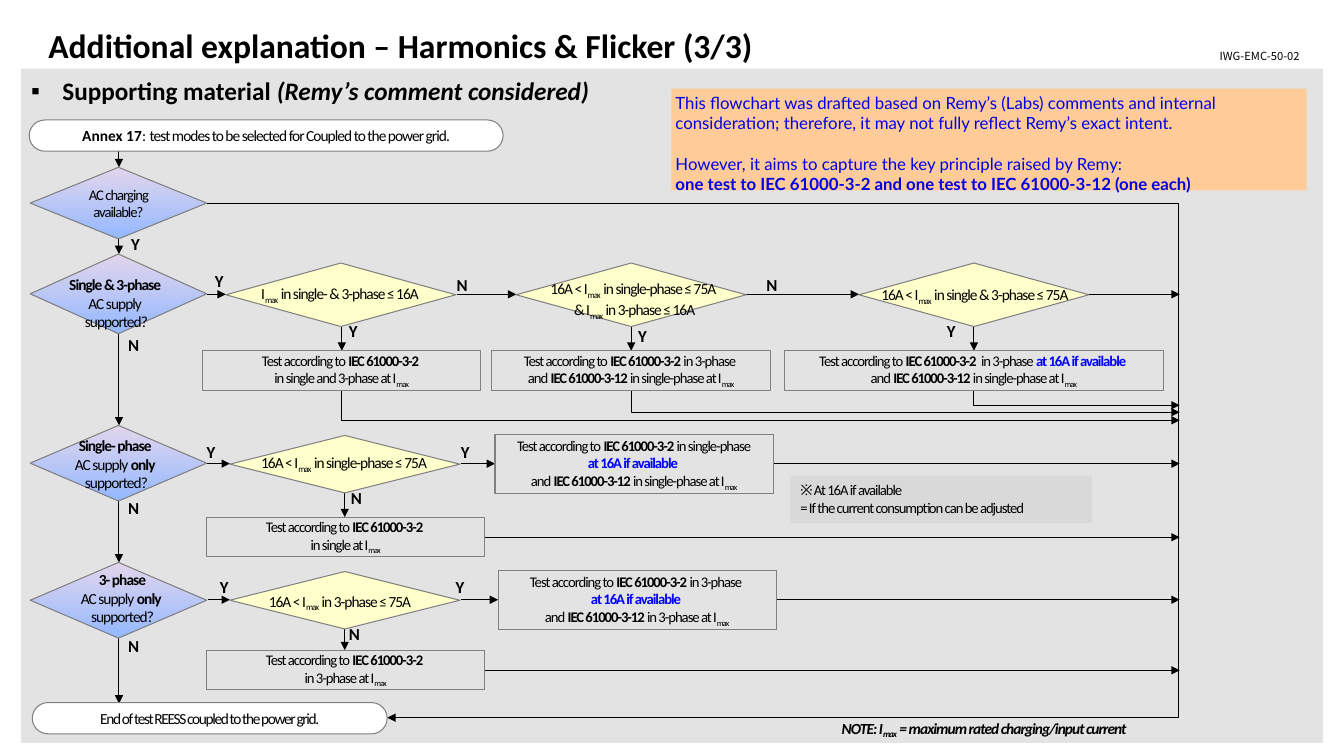
from dataclasses import dataclass

from lxml.etree import SubElement
from pptx import Presentation
from pptx.dml.color import RGBColor
from pptx.enum.shapes import MSO_CONNECTOR, MSO_SHAPE
from pptx.enum.text import MSO_ANCHOR, MSO_AUTO_SIZE, PP_ALIGN
from pptx.oxml.ns import qn
from pptx.util import Inches, Pt

COLORS = {
    "black": "000000", "blue": "0000FF", "note blue": "0000E6", "white": "FFFFFF",
    "panel": "E3E3E3", "remark": "D9D9D9", "comment": "FFCC99", "outline": "808080",
    "check": "FFFFCC", "supply top": "E2D6EC", "supply bottom": "94B8FF",
}
EXIT_X = 11.7
MAIN_X = 1.18


@dataclass(frozen=True)
class Run:
    text: str
    bold: bool = False
    italic: bool = False
    sub: bool = False
    color: str | None = None
    spacing: float | None = None


@dataclass(frozen=True)
class Style:
    size: float = 11
    spacing: float = -0.7
    font: str = "Calibri"
    color: str = "black"
    align: PP_ALIGN = PP_ALIGN.CENTER
    anchor: MSO_ANCHOR = MSO_ANCHOR.MIDDLE
    inset: tuple[float, float] = (0, 0)
    wrap: bool = True


@dataclass(frozen=True)
class Box:
    left: float
    top: float
    width: float
    height: float


@dataclass(frozen=True)
class Check:
    diamond: Box
    text: Box
    paragraphs: list


PADDED = (0.1, 0.05)
SMALL = Style(size=10.5)
CHECK = Style(anchor=MSO_ANCHOR.TOP)
BRANCH = Style(size=12, spacing=0, align=PP_ALIGN.LEFT, anchor=MSO_ANCHOR.TOP, wrap=False)
LEFT_TOP = {"align": PP_ALIGN.LEFT, "anchor": MSO_ANCHOR.TOP}


def rgb(name: str) -> RGBColor:
    return RGBColor.from_string(COLORS[name])


def imax(before: str, after: str = "") -> list[Run]:
    """Runs of a phrase around I with the subscript max."""
    return [Run(before + "I"), Run("max", sub=True)] + ([Run(after)] if after else [])


def low_current(after: str = "") -> list[Run]:
    return [Run("Test according to "), Run("IEC 61000-3-2 ", bold=True)] + (
        [Run(after)] if after else [])


def high_current(phase: str) -> list[Run]:
    return [Run("and "), Run("IEC 61000-3-12 ", bold=True), *imax(f"in {phase} at ")]


def write(frame, paragraphs: list[list[Run]], style: Style) -> None:
    frame.auto_size = MSO_AUTO_SIZE.NONE
    frame.word_wrap = style.wrap
    frame.vertical_anchor = style.anchor
    frame.margin_left = frame.margin_right = Inches(style.inset[0])
    frame.margin_top = frame.margin_bottom = Inches(style.inset[1])
    for index, runs in enumerate(paragraphs):
        paragraph = frame.add_paragraph() if index else frame.paragraphs[0]
        paragraph.alignment = style.align
        paragraph.space_before = Pt(0)
        for part in runs:
            run = paragraph.add_run()
            run.text = part.text
            font = run.font
            font.name, font.size = style.font, Pt(style.size)
            font.bold, font.italic = part.bold, part.italic
            font.color.rgb = rgb(part.color or style.color)
            spacing = style.spacing if part.spacing is None else part.spacing
            properties = font._element
            if spacing:
                properties.set("spc", str(round(spacing * 100)))
            if part.sub:
                properties.set("baseline", "-25000")


def place(shape, box: Box) -> None:
    shape.left, shape.top = Inches(box.left), Inches(box.top)
    shape.width, shape.height = Inches(box.width), Inches(box.height)


def add_block(shapes, kind: MSO_SHAPE, box: Box, fill: str | None, outlined: bool = True):
    """Draw a preset shape; the fill "supply" is the lilac to blue gradient."""
    shape = shapes.add_shape(kind, *map(Inches, (box.left, box.top, box.width, box.height)))
    shape.shadow.inherit = False
    if fill == "supply":
        shape.fill.gradient()
        shape.fill.gradient_angle = 270
        for position, stop in enumerate(shape.fill.gradient_stops):
            stop.position = position
            stop.color.rgb = rgb(("supply top", "supply bottom")[position])
    elif fill:
        shape.fill.solid()
        shape.fill.fore_color.rgb = rgb(fill)
    else:
        shape.fill.background()
    if outlined:
        shape.line.color.rgb = rgb("outline")
        shape.line.width = Pt(0.75)
    else:
        shape.line.fill.background()
    if kind == MSO_SHAPE.ROUNDED_RECTANGLE:
        shape.adjustments[0] = 0.5
    return shape


def add_text(shapes, box: Box, paragraphs: list[list[Run]], style: Style) -> None:
    text = shapes.add_textbox(*map(Inches, (box.left, box.top, box.width, box.height)))
    write(text.text_frame, paragraphs, style)


def add_arrow(shapes, x1: float, y1: float, x2: float, y2: float,
              kind: MSO_CONNECTOR = MSO_CONNECTOR.STRAIGHT):
    arrow = shapes.add_connector(kind, *map(Inches, (x1, y1, x2, y2)))
    arrow.line.color.rgb = rgb("black")
    arrow.line.width = Pt(0.75)
    SubElement(arrow.line._get_or_add_ln(), qn("a:tailEnd"), type="triangle")
    SubElement(arrow._element.spPr, qn("a:effectLst"))
    return arrow


def add_down_then_right(shapes, x1: float, y1: float, x2: float, y2: float) -> None:
    """A one-bend connector is a mirrored elbow turned by 270 degrees about its centre."""
    mid_x, mid_y, half_run, half_drop = (x1 + x2) / 2, (y1 + y2) / 2, (x2 - x1) / 2, (y2 - y1) / 2
    elbow = add_arrow(shapes, mid_x + half_drop, mid_y - half_run,
                      mid_x - half_drop, mid_y + half_run, MSO_CONNECTOR.ELBOW)
    properties = elbow._element.spPr
    properties.find(qn("a:xfrm")).set("rot", "16200000")
    properties.find(qn("a:prstGeom")).set("prst", "bentConnector2")


AT_16A = Run("at 16A if available ", bold=True, color="blue")
ONLY = [Run("AC supply "), Run("only ", bold=True)]

SUPPLY_CHECKS = [
    Check(Box(0.3, 2.52, 1.75, 0.79), Box(0.21, 2.73, 1.89, 0.56),
          [[Run("Single & 3-phase ", bold=True)], [Run("AC supply ")], [Run("supported?")]]),
    Check(Box(0.3, 4.22, 1.75, 0.75), Box(0.21, 4.33, 1.89, 0.56),
          [[Run("Single- phase ", bold=True)], ONLY, [Run("supported?")]]),
    Check(Box(0.3, 5.58, 1.75, 0.75), Box(0.27, 5.66, 1.89, 0.56),
          [[Run("3- phase", bold=True)], ONLY, [Run("supported?")]]),
]
CURRENT_CHECKS = [
    Check(Box(2.24, 2.61, 2.28, 0.63), Box(2.44, 2.82, 1.89, 0.19),
          [imax("", " in single- & 3-phase ≤ 16A ")]),
    Check(Box(5.12, 2.61, 2.28, 0.63), Box(5.31, 2.77, 1.97, 0.37),
          [imax("16A < ", " in single-phase ≤ 75A "), imax("& ", " in 3-phase ≤ 16A")]),
    Check(Box(8.52, 2.61, 2.28, 0.63), Box(8.55, 2.83, 2.24, 0.19),
          [imax("16A < ", " in single & 3-phase ≤ 75A")]),
    Check(Box(2.28, 4.32, 2.28, 0.57), Box(2.44, 4.5, 1.97, 0.19),
          [imax("16A < ", " in single-phase ≤ 75A ")]),
    Check(Box(2.28, 5.67, 2.28, 0.57), Box(2.52, 5.87, 1.73, 0.19),
          [imax("16A < ", " in 3-phase ≤ 75A ")]),
]
TESTS = [
    (Box(2.01, 3.48, 2.76, 0.39), [low_current(), imax("in single and 3-phase at ")]),
    (Box(4.88, 3.48, 2.76, 0.39), [low_current("in 3-phase "), high_current("single-phase")]),
    (Box(7.78, 3.48, 3.76, 0.39),
     [low_current(" in 3-phase ") + [AT_16A], high_current("single-phase")]),
    (Box(4.91, 4.31, 2.76, 0.59),
     [low_current("in single-phase"), [AT_16A], high_current("single-phase")]),
    (Box(2.05, 5.13, 2.76, 0.39), [low_current(), imax("in single at ")]),
    (Box(4.94, 5.66, 2.76, 0.59),
     [low_current("in 3-phase "), [AT_16A], high_current("3-phase")]),
    (Box(2.05, 6.45, 2.76, 0.39), [low_current(), imax("in 3-phase at ")]),
]
DOWN = [(MAIN_X, 1.42, 1.66), (MAIN_X, 2.37, 2.52), (MAIN_X, 3.31, 4.22), (MAIN_X, 4.96, 5.58),
        (MAIN_X, 6.33, 6.98), (3.39, 3.23, 3.48), (6.26, 3.23, 3.48), (9.66, 3.23, 3.48),
        (3.42, 4.89, 5.13), (3.42, 6.24, 6.45)]
RIGHT = [(2.92, 2.05, 2.24), (2.92, 4.53, 5.12), (2.92, 7.4, 8.52), (2.92, 10.8, EXIT_X),
         (4.6, 2.05, 2.28), (4.6, 4.57, 4.91), (4.6, 7.67, EXIT_X), (5.33, 4.8, EXIT_X),
         (5.95, 2.06, 2.28), (5.95, 4.57, 4.94), (5.95, 7.7, EXIT_X), (6.65, 4.8, EXIT_X)]
BRANCHES = {
    "Y": [(1.3, 2.32), (2.13, 2.69), (3.46, 3.18), (6.33, 3.23), (9.39, 3.18),
          (2.05, 4.38), (4.57, 4.38), (2.18, 5.72), (4.52, 5.72)],
    "N": [(4.53, 2.73), (7.6, 2.73), (1.27, 3.32), (3.48, 4.84), (1.27, 4.94),
          (3.46, 6.19), (1.27, 6.31)],
}


def add_headings(slide) -> None:
    title, topic = slide.shapes.title, slide.placeholders[1]
    place(title, Box(0.38, 0.2, 10.65, 0.47))
    write(title.text_frame, [[Run("Additional explanation – Harmonics & Flicker (3/3)", bold=True)]],
          Style(size=24, spacing=0, inset=PADDED, **LEFT_TOP))
    place(topic, Box(0.21, 0.7, 8.98, 0.4))
    write(topic.text_frame, [[Run("Supporting material ", bold=True),
                              Run("(Remy’s comment considered)", bold=True, italic=True)]],
          Style(size=18, spacing=0, inset=PADDED, **LEFT_TOP))
    properties = topic.text_frame.paragraphs[0]._p.get_or_add_pPr()
    properties.set("marL", str(Inches(0.31)))
    properties.set("indent", str(-Inches(0.31)))
    SubElement(properties, qn("a:buChar"), char="▪")


def add_flowchart(shapes) -> None:
    for x, top, bottom in DOWN:
        add_arrow(shapes, x, top, x, bottom)
    for y, left, right in RIGHT:
        add_arrow(shapes, left, y, right, y)
    for x, lane in ((3.39, 4.17), (6.26, 4.09), (9.66, 4.02)):
        add_down_then_right(shapes, x, 3.87, EXIT_X, lane)
    no_charging = add_arrow(shapes, 2.05, 2.02, 3.84, 7.12, MSO_CONNECTOR.ELBOW)
    adjustments = no_charging._element.spPr.find(qn("a:prstGeom")).get_or_add_avLst()
    SubElement(adjustments, qn("a:gd"), name="adj1", fmla="val 538500")

    start = add_block(shapes, MSO_SHAPE.ROUNDED_RECTANGLE, Box(0.29, 1.19, 4.7, 0.31), "white")
    write(start.text_frame, [[Run("Annex 17", bold=True, spacing=0), Run(": ", spacing=0),
                              Run("test modes to be selected for Coupled to the power grid.")]],
          Style(inset=PADDED))
    end = add_block(shapes, MSO_SHAPE.ROUNDED_RECTANGLE, Box(0.32, 6.97, 3.52, 0.31), "white")
    write(end.text_frame, [[Run("End of test REESS coupled to the power grid.")]],
          Style(spacing=-1, inset=PADDED))
    charging = add_block(shapes, MSO_SHAPE.DIAMOND, Box(0.3, 1.66, 1.75, 0.71), "supply")
    write(charging.text_frame, [[Run("AC charging available?")]], SMALL)
    for fill, checks in (("supply", SUPPLY_CHECKS), ("check", CURRENT_CHECKS)):
        for check in checks:
            add_block(shapes, MSO_SHAPE.DIAMOND, check.diamond, fill)
            add_text(shapes, check.text, check.paragraphs, CHECK)
    for box, paragraphs in TESTS:
        write(add_block(shapes, MSO_SHAPE.RECTANGLE, box, None).text_frame, paragraphs, SMALL)
    for answer, spots in BRANCHES.items():
        for x, y in spots:
            add_text(shapes, Box(x, y, 0.11, 0.2), [[Run(answer, bold=True)]], BRANCH)


def add_notes(shapes) -> None:
    remark = add_block(shapes, MSO_SHAPE.RECTANGLE, Box(7.84, 4.72, 2.99, 0.47), "remark", False)
    write(remark.text_frame, [[Run("※ At 16A if available")],
                              [Run("= If the current consumption can be adjusted")]],
          Style(size=10.5, inset=PADDED, **LEFT_TOP))
    comment = add_block(shapes, MSO_SHAPE.RECTANGLE, Box(6.66, 0.88, 6.3, 1.01), "comment", False)
    write(comment.text_frame, [
        [Run("This flowchart was drafted based on Remy’s (Labs) comments and internal "
             "consideration; therefore, it may not fully reflect Remy’s exact intent.")],
        [Run("However, it aims to capture the key principle raised by Remy:")],
        [Run("one test to IEC 61000-3-2 and one test to IEC 61000-3-12 (one each)", bold=True)],
    ], Style(size=12, spacing=0, font="Lato", color="note blue", inset=(0.04, 0.04), **LEFT_TOP))
    comment.text_frame.paragraphs[1].space_before = Pt(14.4)
    definition = [Run("NOTE: I", True, True), Run("max", True, True, sub=True),
                  Run(" = maximum rated charging/input current", True, True)]
    add_text(shapes, Box(8.25, 7.08, 4.11, 0.29), [definition], Style(inset=PADDED, **LEFT_TOP))
    add_text(shapes, Box(11.1, 0.44, 1.89, 0.24), [[Run("IWG-EMC-50-02")]],
             Style(size=8, spacing=0, font="Noto Sans CJK KR", align=PP_ALIGN.RIGHT,
                   anchor=MSO_ANCHOR.TOP, inset=PADDED))


def main() -> None:
    deck = Presentation()
    deck.slide_width, deck.slide_height = Inches(13.33), Inches(7.5)
    slide = deck.slides.add_slide(deck.slide_layouts[1])
    panel = add_block(slide.shapes, MSO_SHAPE.RECTANGLE, Box(0.21, 0.68, 12.91, 6.69), "panel", False)
    slide.shapes._spTree.insert(2, panel._element)
    add_headings(slide)
    add_flowchart(slide.shapes)
    add_notes(slide.shapes)
    deck.save("out.pptx")


if __name__ == "__main__":
    main()
